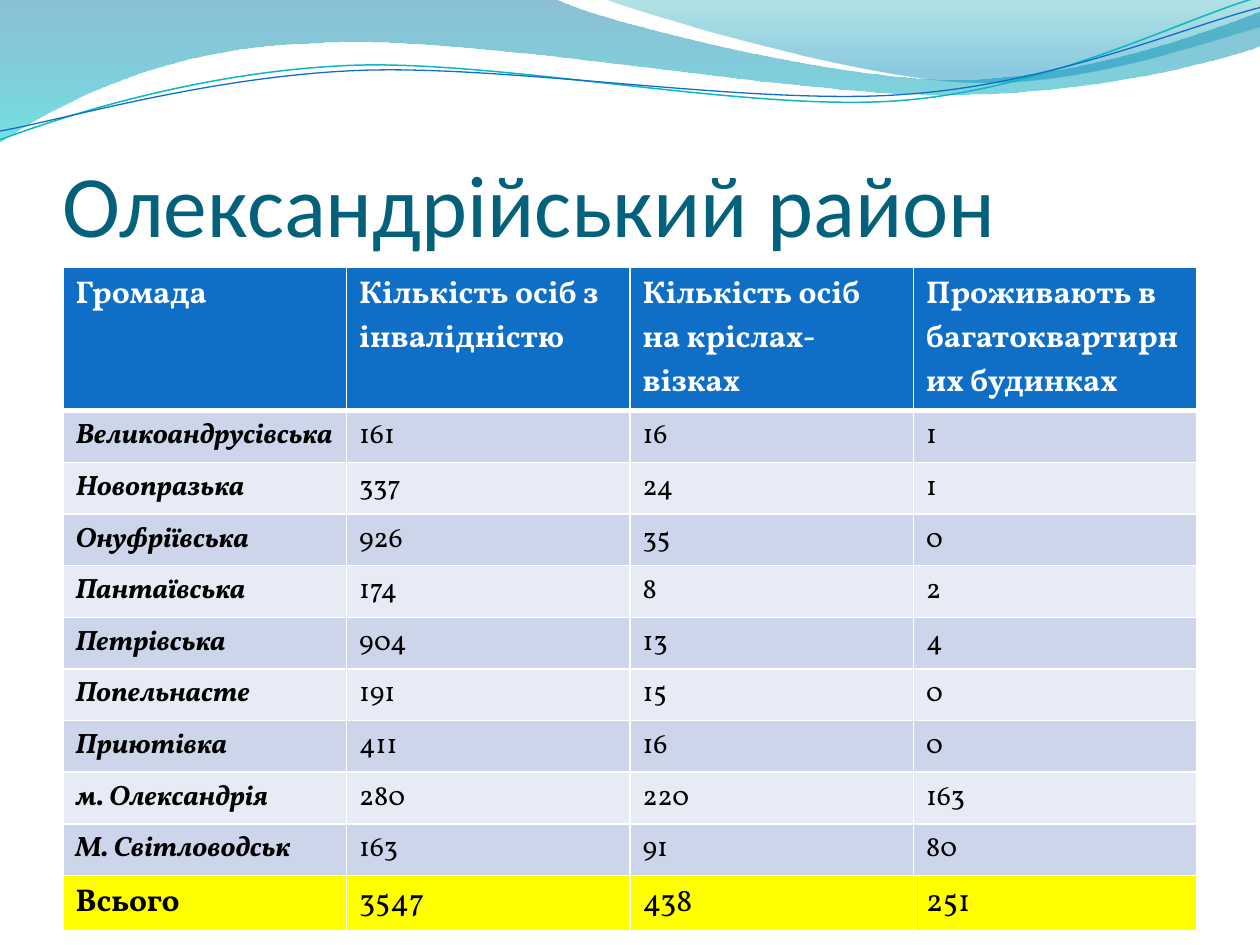
from lxml.etree import SubElement
from pptx import Presentation
from pptx.dml.color import RGBColor
from pptx.enum.text import MSO_ANCHOR
from pptx.oxml.ns import qn
from pptx.util import Inches, Pt

COLORS = {
    "title": "04617B", "header": "0F6FC6", "odd": "CCD5EA", "even": "E7EBF5",
    "total": "FFFF00", "white": "FFFFFF", "black": "000000",
    "teal": "0AB8BF", "blue": "0F6FC6",
}

deck = Presentation()
deck.slide_width, deck.slide_height = Inches(10), Inches(7.5)
page = deck.slides.add_slide(deck.slide_layouts[6])


def add_outline(start, segments, closed):
    """Draw a freeform; a segment is a line (x, y) or a Bezier curve of six numbers."""
    points = [(Inches(x), Inches(y)) for segment in segments
              for x, y in zip(segment[::2], segment[1::2])]
    builder = page.shapes.build_freeform(Inches(start[0]), Inches(start[1]))
    builder.add_line_segments(points, close=closed)
    shape = builder.convert_to_shape()
    shape.shadow.inherit = False
    # Join the three points of each curve into one Bezier element
    steps = list(shape._element.iter(qn("a:lnTo")))
    for segment in segments:
        used, steps = steps[:len(segment) // 2], steps[len(segment) // 2:]
        if len(used) == 3:
            curve = SubElement(used[0].getparent(), qn("a:cubicBezTo"))
            used[0].addprevious(curve)
            for step in used:
                curve.append(step[0])
                step.getparent().remove(step)
    return shape


def write(frame, text, size, color, font="Vollkorn", bold=False, italic=False):
    span = frame.paragraphs[0].add_run()
    span.text = text
    span.font.name, span.font.size = font, Pt(size)
    span.font.bold, span.font.italic = bold, italic
    span.font.color.rgb = RGBColor.from_string(COLORS[color])


# Translucent waves: start, segments, gradient stops (position, colour, opacity %)
waves = [
    ((0, 0),
     [(4.4, -0.01), (4.76, 0.17, 6.64, 0.63, 7.58, 0.63),
      (8.53, 0.63, 9.58, 0.26, 10, 0.09), (10.01, 0.36),
      (9.83, 0.44, 8.7, 0.76, 7.46, 0.75), (6.22, 0.75, 3.82, 0.28, 2.57, 0.34),
      (1.29, 0.36, 0.46, 0.83, -0.01, 1.13)],
     [(0, "0074A1", 45), (1, "00C6CF", 55)]),
    ((4.79, -0.01),
     [(5.09, 0.11, 6.82, 0.62, 7.69, 0.65), (8.56, 0.69, 9.61, 0.32, 10, 0.21), (10, 0)],
     [(0, "00A1A9", 30), (0.8, "008BBF", 45)]),
]
for start, segments, stops in waves:
    wave = add_outline(start, segments, closed=True)
    wave.line.fill.background()
    wave.fill.gradient()
    wave.fill.gradient_angle = 270
    for stop, (position, color, _) in zip(wave.fill.gradient_stops, stops):
        stop.position = position
        stop.color.rgb = RGBColor.from_string(color)
    for node, (_, _, opacity) in zip(wave._element.iter(qn("a:srgbClr")), stops):
        SubElement(node, qn("a:alpha"), val=str(opacity * 1000))

# Thin wave lines
strands = [
    ((0, 1.11), [(0.48, 0.93, 1.58, 0.57, 2.77, 0.52), (3.95, 0.47, 5.93, 0.89, 7.13, 0.8),
                 (8.33, 0.71, 9.38, 0.15, 9.98, -0.02)], "teal", 0.85),
    ((0, 1.04), [(0.47, 0.96, 1.64, 0.61, 2.83, 0.56), (4.03, 0.51, 5.97, 0.84, 7.17, 0.75),
                 (8.36, 0.67, 9.41, 0.21, 10, 0.06)], "blue", 0.75),
]
for start, segments, color, width in strands:
    strand = add_outline(start, segments, closed=False)
    strand.fill.background()
    strand.line.color.rgb = RGBColor.from_string(COLORS[color])
    strand.line.width = Pt(width)

# Title
title = page.shapes.add_textbox(Inches(0.5), Inches(0.77), Inches(9), Inches(1.25)).text_frame
title.word_wrap = True
title.vertical_anchor = MSO_ANCHOR.BOTTOM
title.margin_left = title.margin_right = title.margin_bottom = 0
title.margin_top = Inches(0.05)
write(title, "Олександрійський район", 50, "title", font="Calibri")

# Table
rows = [
    ("Громада", "Кількість осіб з інвалідністю", "Кількість осіб на кріслах-візках",
     "Проживають в багатоквартирних будинках"),
    ("Великоандрусівська", 161, 16, 1),
    ("Новопразька", 337, 24, 1),
    ("Онуфріївська", 926, 35, 0),
    ("Пантаївська", 174, 8, 2),
    ("Петрівська", 904, 13, 4),
    ("Попельнасте", 191, 15, 0),
    ("Приютівка", 411, 16, 0),
    ("м. Олександрія", 280, 220, 163),
    ("М. Світловодськ", 163, 91, 80),
    ("Всього", 3547, 438, 251),
]
last = len(rows) - 1
table = page.shapes.add_table(len(rows), 4, Inches(0.5), Inches(2.12),
                              Inches(9), Inches(5.28)).table
for column in table.columns:
    column.width = Inches(2.25)

for r, values in enumerate(rows):
    is_header, is_total = r == 0, r == last
    table.rows[r].height = Inches(1.14 if is_header else 0.44 if is_total else 0.41)
    fill = "header" if is_header else "total" if is_total else "odd" if r % 2 else "even"
    for c, value in enumerate(values):
        cell = table.cell(r, c)
        # White borders, thicker under the header
        thick = {"a:lnB": r == 0, "a:lnT": r == 1}
        for side in ("a:lnL", "a:lnR", "a:lnT", "a:lnB"):
            width = Pt(3 if thick.get(side) else 1)
            edge = SubElement(cell._tc.get_or_add_tcPr(), qn(side), w=str(width))
            SubElement(SubElement(edge, qn("a:solidFill")), qn("a:srgbClr"), val=COLORS["white"])
        cell.fill.solid()
        cell.fill.fore_color.rgb = RGBColor.from_string(COLORS[fill])
        write(cell.text_frame, str(value), 18 if is_header or is_total else 16,
              "white" if is_header else "black", bold=is_header or c == 0,
              italic=c == 0 and not is_header and not is_total)

deck.save("out.pptx")
